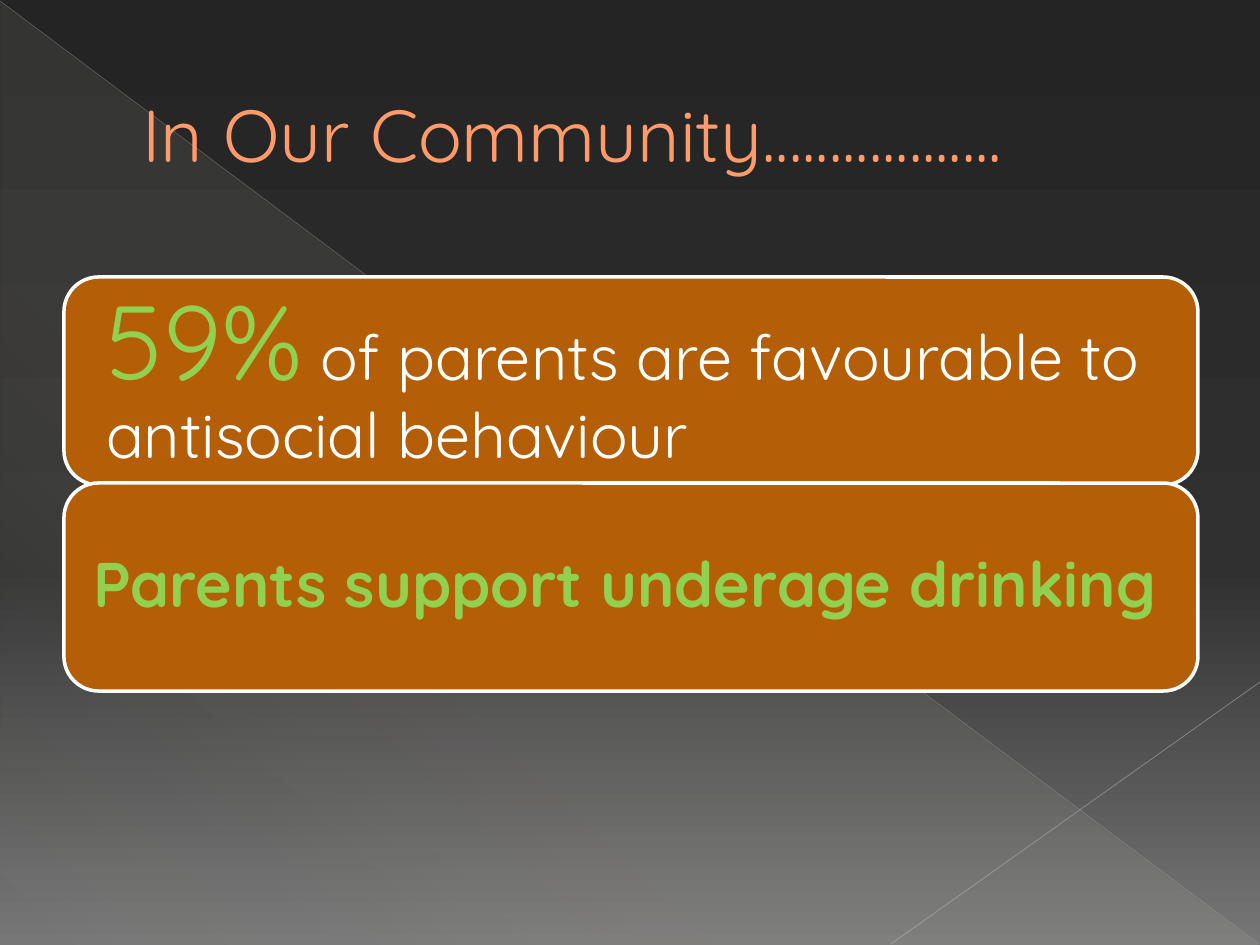
from lxml import etree
from pptx import Presentation
from pptx.dml.color import RGBColor
from pptx.enum.shapes import MSO_CONNECTOR, MSO_SHAPE
from pptx.enum.text import MSO_ANCHOR, MSO_AUTO_SIZE, PP_ALIGN
from pptx.oxml.ns import qn
from pptx.util import Pt

STRAIGHT = MSO_CONNECTOR.STRAIGHT
TRIANGLE, ROUNDED = MSO_SHAPE.RIGHT_TRIANGLE, MSO_SHAPE.ROUNDED_RECTANGLE
MIDDLE, LEFT, NO_FIT = MSO_ANCHOR.MIDDLE, PP_ALIGN.LEFT, MSO_AUTO_SIZE.NONE

EMU_PER_PX = 914400 / 126
FONT = "Quicksand"
COLORS = {
    "night": "242424", "charcoal": "303030", "gray": "767676",
    "cream": "E3DED1", "diagonal": "B6B6B6", "corner": "BFBFBF",
    "title": "FF9B6A", "outline": "A65806", "card": "B45F07",
    "green": "92D050", "white": "FFFFFF",
}


def px(*lengths):
    return [round(length * EMU_PER_PX) for length in lengths]


def set_gradient(fill, element, stops, angle):
    """Replace the default gradient by (position, color, opacity) stops."""
    fill.gradient()
    gradient = element.find(".//" + qn("a:gradFill"))
    for child in list(gradient):
        gradient.remove(child)
    stop_list = etree.SubElement(gradient, qn("a:gsLst"))
    for position, color, opacity in stops:
        stop = etree.SubElement(stop_list, qn("a:gs"), pos=str(position * 1000))
        paint = etree.SubElement(stop, qn("a:srgbClr"), val=COLORS[color])
        etree.SubElement(paint, qn("a:alpha"), val=str(opacity * 1000))
    etree.SubElement(gradient, qn("a:lin"), ang=str(angle * 60000), scaled="0")


deck = Presentation()
deck.slide_width, deck.slide_height = px(1260, 945)
page = deck.slides.add_slide(deck.slide_layouts[5])

# Background and translucent triangle
set_gradient(page.background.fill, page.element,
             [(0, "night", 100), (60, "charcoal", 100), (100, "gray", 100)], 90)
triangle = page.shapes.add_shape(TRIANGLE, *px(1, 2, 1258, 943))
triangle.shadow.inherit = False
triangle.line.fill.background()
set_gradient(triangle.fill, triangle.element,
             [(0, "cream", 10), (70, "cream", 8), (100, "cream", 1)], 133)

# Thin crossing lines
for ends, color, width, opacity in [
    ((0, 1, 1259, 944), "diagonal", 0.39, 35),
    ((1260, 682, 891, 944), "corner", 0.47, 45),
]:
    line = page.shapes.add_connector(STRAIGHT, *px(*ends))
    line.line.color.rgb = RGBColor.from_string(COLORS[color])
    line.line.width = Pt(width)
    paint = line.element.find(".//" + qn("a:srgbClr"))
    etree.SubElement(paint, qn("a:alpha"), val=str(opacity * 1000))
    etree.SubElement(line.element.spPr, qn("a:effectLst"))

# Title, moved in front of the background shapes
title = page.shapes.title
page.shapes.element.append(title.element)
title.left, title.top, title.width, title.height = px(63, 37, 1134, 193)
frame = title.text_frame
frame.auto_size, frame.vertical_anchor = NO_FIT, MIDDLE
para = frame.paragraphs[0]
para.alignment = LEFT
properties = para._p.get_or_add_pPr()
properties.set("marL", str(px(67)[0]))
properties.set("indent", "0")
span = para.add_run()
span.text = "In Our Community.................."
span.font.name, span.font.size = FONT, Pt(42)
span.font.color.rgb = RGBColor.from_string(COLORS["title"])
outline = etree.Element(qn("a:ln"), w=str(Pt(0.5)))
outline_fill = etree.SubElement(outline, qn("a:solidFill"))
etree.SubElement(outline_fill, qn("a:srgbClr"), val=COLORS["outline"])
span._r.get_or_add_rPr().insert(0, outline)

# Stacked cards, each with a text box inset from its edge
CARD_LEFT, CARD_TOP, CARD_WIDTH, CARD_HEIGHT = 64, 277, 1134, 208
CARD_STEP, INSET = 206, 10
cards = [
    (32, [("59%", 60, "green", False),
          (" of parents are favourable to antisocial behaviour", 36, "white", False)]),
    (19, [("Parents support underage drinking", 36, "green", True)]),
]
for index, (margin, spans) in enumerate(cards):
    top = CARD_TOP + index * CARD_STEP
    card = page.shapes.add_shape(
        ROUNDED, *px(CARD_LEFT, top, CARD_WIDTH, CARD_HEIGHT))
    card.shadow.inherit = False
    card.fill.solid()
    card.fill.fore_color.rgb = RGBColor.from_string(COLORS["card"])
    card.line.color.rgb = RGBColor.from_string(COLORS["white"])
    card.line.width = Pt(2)

    box = page.shapes.add_textbox(*px(
        CARD_LEFT + INSET, top + INSET,
        CARD_WIDTH - 2 * INSET, CARD_HEIGHT - 2 * INSET))
    frame = box.text_frame
    frame_format = {"word_wrap": True, "auto_size": NO_FIT, "vertical_anchor": MIDDLE}
    for side in ("left", "top", "right", "bottom"):
        frame_format["margin_" + side] = px(margin)[0]
    for name, value in frame_format.items():
        setattr(frame, name, value)
    para = frame.paragraphs[0]
    para.alignment, para.line_spacing = LEFT, 0.9
    for text, size, color, bold in spans:
        span = para.add_run()
        span.text = text
        for name, value in {"name": FONT, "size": Pt(size), "bold": bold}.items():
            setattr(span.font, name, value)
        span.font.color.rgb = RGBColor.from_string(COLORS[color])

deck.save("out.pptx")
